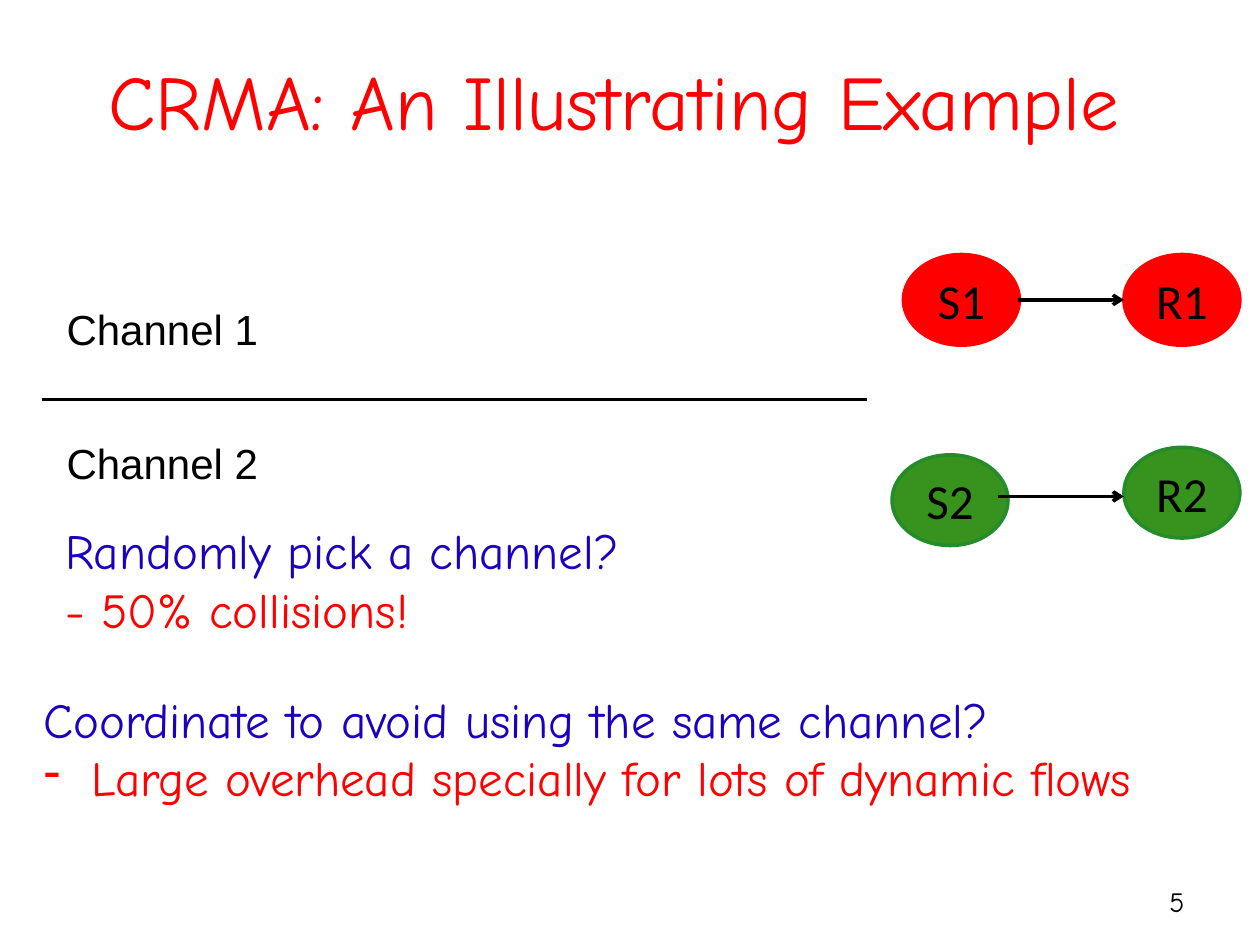
from dataclasses import dataclass

from lxml import etree
from pptx import Presentation
from pptx.dml.color import RGBColor
from pptx.enum.shapes import MSO_CONNECTOR, MSO_SHAPE
from pptx.enum.text import MSO_ANCHOR, MSO_AUTO_SIZE, PP_ALIGN
from pptx.oxml.ns import qn
from pptx.util import Inches, Pt

OVAL = MSO_SHAPE.OVAL
STRAIGHT = MSO_CONNECTOR.STRAIGHT
MIDDLE = MSO_ANCHOR.MIDDLE
FIT, FIXED = MSO_AUTO_SIZE.SHAPE_TO_FIT_TEXT, MSO_AUTO_SIZE.NONE
LEFT, CENTER, RIGHT = PP_ALIGN.LEFT, PP_ALIGN.CENTER, PP_ALIGN.RIGHT

BLACK = RGBColor(0x00, 0x00, 0x00)
RED = RGBColor(0xFF, 0x00, 0x00)
GREEN = RGBColor(0x37, 0x92, 0x1E)
EDGE = RGBColor(0x24, 0x8C, 0x29)
BLUE = RGBColor(0x1B, 0x00, 0xC0)
COMIC = "Comic Neue"
NODE_W, NODE_H = 0.92, 0.72


@dataclass
class Line:
    text: str
    color: RGBColor = BLACK
    size: int = 28
    face: str = COMIC
    align: PP_ALIGN = LEFT


@dataclass
class Node:
    name: str
    x: float
    y: float
    fill: RGBColor
    edge: RGBColor


@dataclass
class Link:
    start: float
    end: float
    y: float
    arrow: bool = True


NODES = [
    Node("S1", 7.17, 2.02, RED, RED),
    Node("R1", 8.92, 2.02, RED, RED),
    Node("S2", 7.08, 3.61, GREEN, EDGE),
    Node("R2", 8.92, 3.55, GREEN, EDGE),
]
LINKS = [
    Link(0.33, 6.88, 3.17, arrow=False),
    Link(8.08, 8.92, 2.38),
    Link(7.92, 8.92, 3.94),
]


def write(frame, lines: list[Line]) -> None:
    for i, line in enumerate(lines):
        para = frame.paragraphs[0] if i == 0 else frame.add_paragraph()
        para.text = line.text
        para.alignment = line.align
        para.font.name = line.face
        para.font.size = Pt(line.size)
        para.font.color.rgb = line.color


def add_text(slide, x: float, y: float, w: float, h: float,
             lines: list[Line], wrap: bool = False, fit: bool = True):
    box = slide.shapes.add_textbox(Inches(x), Inches(y), Inches(w), Inches(h))
    frame = box.text_frame
    frame.word_wrap = wrap
    frame.auto_size = FIT if fit else FIXED
    write(frame, lines)
    return frame


def add_node(slide, node: Node) -> None:
    oval = slide.shapes.add_shape(OVAL, Inches(node.x), Inches(node.y),
                                  Inches(NODE_W), Inches(NODE_H))
    oval.shadow.inherit = False
    oval.fill.solid()
    oval.fill.fore_color.rgb = node.fill
    oval.line.color.rgb = node.edge
    oval.line.width = Pt(2)
    frame = oval.text_frame
    frame.word_wrap = False
    frame.vertical_anchor = MIDDLE
    write(frame, [Line(node.name, face="Calibri", align=CENTER)])


def add_link(slide, link: Link) -> None:
    y = Inches(link.y)
    wire = slide.shapes.add_connector(STRAIGHT, Inches(link.start), y,
                                      Inches(link.end), y)
    wire.line.color.rgb = BLACK
    wire.line.width = Pt(2)
    if link.arrow:
        etree.SubElement(wire.line._get_or_add_ln(), qn("a:tailEnd"), type="arrow")
    etree.SubElement(wire._element.spPr, qn("a:effectLst"))


def add_dash(para, indent: float) -> None:
    """Give the paragraph a hanging dash bullet."""
    props = para._p.get_or_add_pPr()
    props.set("marL", str(Inches(indent)))
    props.set("indent", str(-Inches(indent)))
    etree.SubElement(props, qn("a:buChar"), char="-")
    # The bullet must come before the default run properties.
    props.append(props.find(qn("a:defRPr")))


def main() -> None:
    deck = Presentation()
    deck.slide_width, deck.slide_height = Inches(10), Inches(7.5)
    slide = deck.slides.add_slide(deck.slide_layouts[5])

    title = slide.shapes.title
    title.left, title.top = Inches(0.25), Inches(0.17)
    title.width, title.height = Inches(9.25), Inches(1.25)
    title.text_frame.vertical_anchor = MIDDLE
    write(title.text_frame,
          [Line("CRMA: An Illustrating Example", RED, 44, align=CENTER)])

    number = add_text(slide, 7.17, 6.95, 2.33, 0.4,
                      [Line("5", size=16, align=RIGHT)], wrap=True, fit=False)
    number.vertical_anchor = MIDDLE

    for name, y in (("Channel 1", 2.36), ("Channel 2", 3.42)):
        add_text(slide, 0.43, y, 1.74, 0.5, [Line(name, size=24, face="Arial")])
    for node in NODES:
        add_node(slide, node)
    for link in LINKS:
        add_link(slide, link)

    add_text(slide, 0.42, 4.08, 5.41, 1.45,
             [Line("Randomly pick a channel?", BLUE),
              Line("- 50% collisions!", RED)], wrap=True)
    plan = add_text(slide, 0.25, 5.42, 9.79, 1.38,
                    [Line("Coordinate to avoid using the same channel?", BLUE),
                     Line("Large overhead specially for lots of dynamic flows", RED)])
    add_dash(plan.paragraphs[1], 0.38)

    deck.save("out.pptx")


if __name__ == "__main__":
    main()
